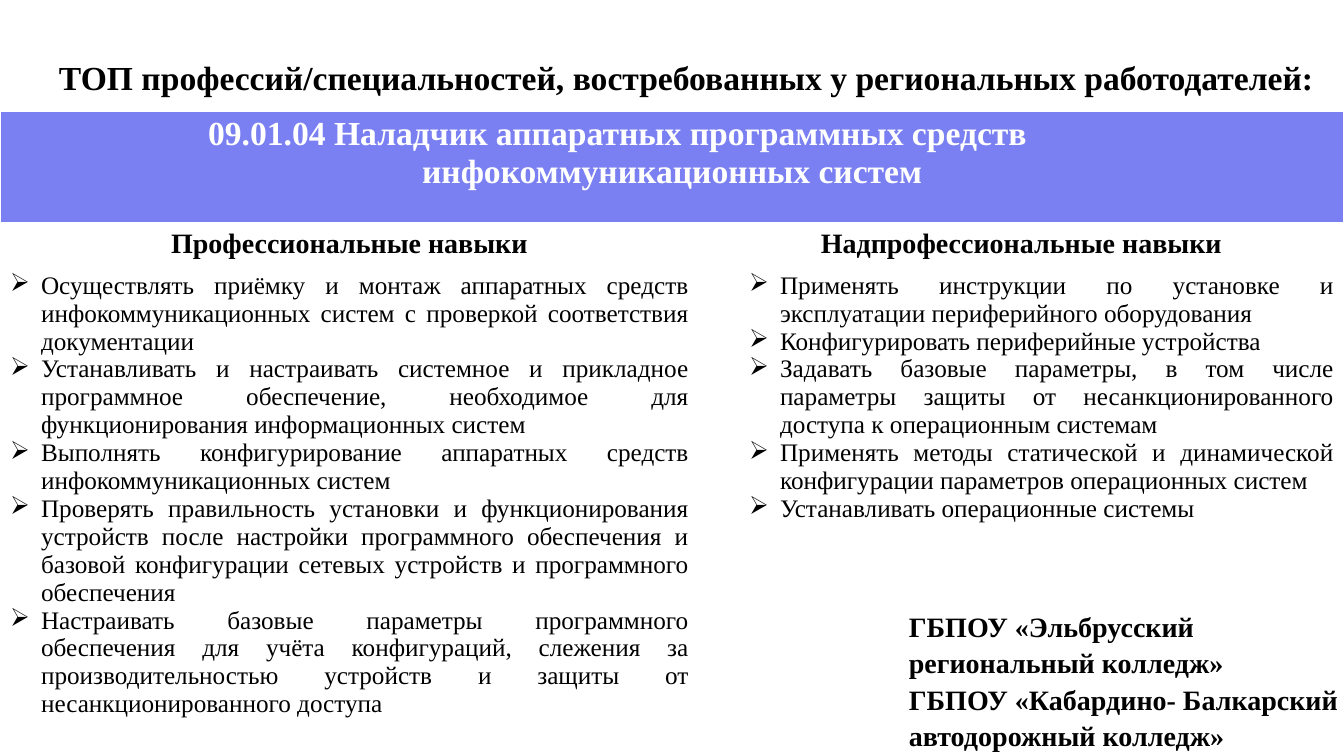
import pptx
import pptx.util
import pptx.dml.color
import pptx.enum.text
import pptx.oxml
import pptx.oxml.ns

TITLE = "ТОП профессий/специальностей, востребованных у региональных работодателей:"
TRADE = "09.01.04 Наладчик аппаратных программных средств инфокоммуникационных систем"
HEADS = ["Профессиональные навыки", "Надпрофессиональные навыки"]
SKILLS = [
    [
        "Осуществлять приёмку и монтаж аппаратных средств инфокоммуникационных систем с проверкой соответствия документации",
        "Устанавливать и настраивать системное и прикладное программное обеспечение, необходимое для функционирования информационных систем",
        "Выполнять конфигурирование аппаратных средств инфокоммуникационных систем",
        "Проверять правильность установки и функционирования устройств после настройки программного обеспечения и базовой конфигурации сетевых устройств и программного обеспечения",
        "Настраивать базовые параметры программного обеспечения для учёта конфигураций, слежения за производительностью устройств и защиты от несанкционированного доступа",
    ],
    [
        "Применять инструкции по установке и эксплуатации периферийного оборудования",
        "Конфигурировать периферийные устройства",
        "Задавать базовые параметры, в том числе параметры защиты от несанкционированного доступа к операционным системам",
        "Применять методы статической и динамической конфигурации параметров операционных систем",
        "Устанавливать операционные системы",
    ],
]
SCHOOLS = [
    "ГБПОУ «Эльбрусский",
    "региональный колледж»",
    "ГБПОУ «Кабардино- Балкарский",
    "автодорожный колледж»",
]

COLS = [699, 645]
ROWS = [112, 43, 152]
INDENTS = [31, 71]
HANG = 31
FONT = "Times New Roman"
BLACK = pptx.dml.color.RGBColor(0, 0, 0)
WHITE = pptx.dml.color.RGBColor(255, 255, 255)
VIOLET = pptx.dml.color.RGBColor(0x7A, 0x80, 0xF2)
ALIGN = pptx.enum.text.PP_ALIGN


def px(n):
    return pptx.util.Emu(round(n * 914400 / 100.8))


def write(frame, lines, size, bold=True, color=BLACK, align=ALIGN.LEFT,
          left=0, hang=0, bullet=None, space=None):
    for i, line in enumerate(lines):
        para = frame.paragraphs[0] if i == 0 else frame.add_paragraph()
        para.alignment = align
        if space:
            para.line_spacing = space
        props = para._p.get_or_add_pPr()
        if left:
            props.set("marL", str(px(left)))
            props.set("indent", str(-px(hang)))
        if bullet:
            mark = pptx.oxml.ns.qn("a:buChar")
            props.append(props.makeelement(mark, {"char": bullet}))
        run = para.add_run()
        run.text = line
        run.font.name = FONT
        run.font.size = pptx.util.Pt(size)
        run.font.bold = bold
        run.font.color.rgb = color


def edge(cell):
    props = cell._tc.get_or_add_tcPr()
    for i, side in enumerate(["lnL", "lnR", "lnT"]):
        props.insert(i, pptx.oxml.parse_xml(
            f'<a:{side} {pptx.oxml.ns.nsdecls("a")} w="12700"><a:solidFill>'
            f'<a:srgbClr val="{WHITE}"/></a:solidFill></a:{side}>'))


deck = pptx.Presentation()
deck.slide_width, deck.slide_height = px(1344), px(756)
slide = deck.slides.add_slide(deck.slide_layouts[6])

# Title
box = slide.shapes.add_textbox(px(49), px(49), px(1323), px(50))
box.text_frame.word_wrap = True
write(box.text_frame, [TITLE], 24, space=1.08)

# Skills table
frame = slide.shapes.add_table(3, 2, 0, px(111), px(sum(COLS)), px(sum(ROWS)))
table = frame.table
table.first_row = table.horz_banding = False
for col, wide in zip(table.columns, COLS):
    col.width = px(wide)
for row, high in zip(table.rows, ROWS):
    row.height = px(high)
for cell in table.iter_cells():
    cell.fill.background()

# Trade band: first line hangs to the left of the second
band = table.cell(0, 0)
band.merge(table.cell(0, 1))
band.fill.solid()
band.fill.fore_color.rgb = VIOLET
edge(band)
write(band.text_frame, [TRADE], 24, color=WHITE, left=412, hang=214)

# Columns
for i, (head, skills, left) in enumerate(zip(HEADS, SKILLS, INDENTS)):
    write(table.cell(1, i).text_frame, [head], 20, align=ALIGN.CENTER)
    write(table.cell(2, i).text_frame, skills, 18, bold=False,
          align=ALIGN.JUSTIFY, left=left, hang=HANG, bullet="➢")

# Colleges
box = slide.shapes.add_textbox(px(899), px(602), px(686), px(146))
box.text_frame.word_wrap = True
write(box.text_frame, SCHOOLS, 20, space=1.08)

deck.save("out.pptx")
